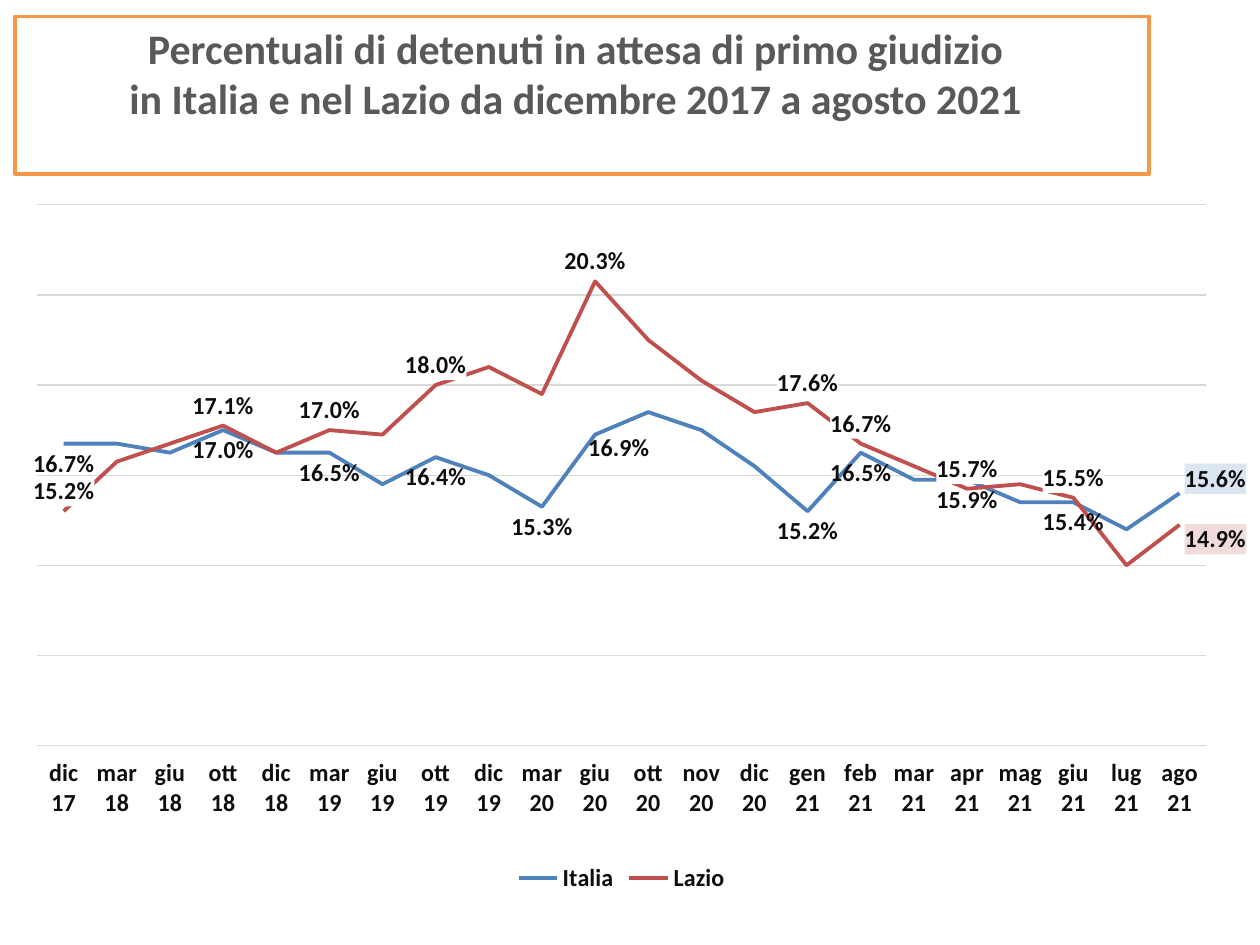
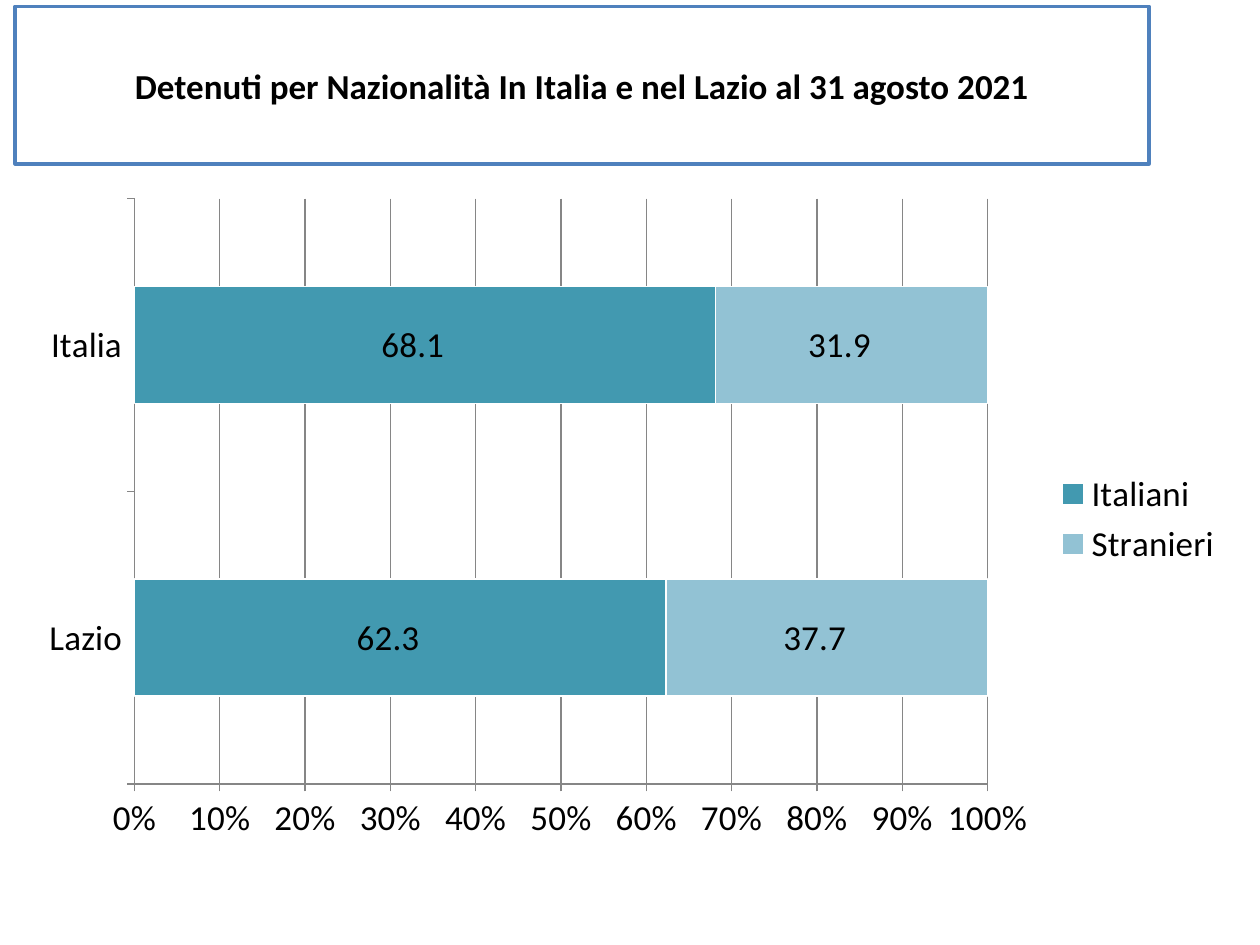
from dataclasses import dataclass, field

from pptx import Presentation
from pptx.chart.chart import Chart
from pptx.chart.data import CategoryChartData
from pptx.dml.color import RGBColor
from pptx.enum.chart import (XL_CHART_TYPE, XL_LABEL_POSITION,
                             XL_LEGEND_POSITION, XL_TICK_LABEL_POSITION,
                             XL_TICK_MARK)
from pptx.enum.shapes import MSO_SHAPE
from pptx.enum.text import MSO_ANCHOR, PP_ALIGN
from pptx.oxml import parse_xml
from pptx.oxml.ns import nsdecls
from pptx.slide import Slide
from pptx.util import Inches, Pt

LINE, STACK = XL_CHART_TYPE.LINE, XL_CHART_TYPE.BAR_STACKED_100
ABOVE, BELOW = XL_LABEL_POSITION.ABOVE, XL_LABEL_POSITION.BELOW
CENTRE = XL_LABEL_POSITION.CENTER
BOTTOM, RIGHT = XL_LEGEND_POSITION.BOTTOM, XL_LEGEND_POSITION.RIGHT
LOW = XL_TICK_LABEL_POSITION.LOW
NO_TICK, TICK = XL_TICK_MARK.NONE, XL_TICK_MARK.OUTSIDE
RECT = MSO_SHAPE.RECTANGLE
TOP, MIDDLE = MSO_ANCHOR.TOP, MSO_ANCHOR.MIDDLE
MID = PP_ALIGN.CENTER

FONT = "Calibri"
WHITE = RGBColor(0xFF, 0xFF, 0xFF)
BLACK = RGBColor(0x00, 0x00, 0x00)
INK = RGBColor(0x0D, 0x0D, 0x0D)
GREY = RGBColor(0x59, 0x59, 0x59)
PALE = RGBColor(0xD9, 0xD9, 0xD9)
AXIS = RGBColor(0x86, 0x86, 0x86)
ORANGE = RGBColor(0xF7, 0x96, 0x46)
BLUE = RGBColor(0x4F, 0x81, 0xBD)
RED = RGBColor(0xC0, 0x50, 0x4D)
ICE = RGBColor(0xDC, 0xE6, 0xF2)
ROSE = RGBColor(0xF2, 0xDC, 0xDB)
TEAL = RGBColor(0x42, 0x99, 0xB0)
AQUA = RGBColor(0x92, 0xC2, 0xD4)


@dataclass
class Title:
    text: str
    top: float
    size: int
    color: RGBColor
    edge: RGBColor
    anchor: MSO_ANCHOR = MIDDLE
    right: float = 0.1


@dataclass
class Trend:
    name: str
    vals: list[float]
    color: RGBColor
    place: XL_LABEL_POSITION
    shown: list[int]
    last: RGBColor
    back: RGBColor | None = None
    shifts: dict[int, tuple[float, float]] = field(default_factory=dict)


@dataclass
class Share:
    name: str
    vals: list[float]
    color: RGBColor


@dataclass
class Frame:
    left: float
    top: float
    width: float
    height: float
    size: int
    color: RGBColor
    bold: bool
    legend: XL_LEGEND_POSITION


MONTHS = ["ago 21", "lug 21", "giu 21", "mag 21", "apr 21", "mar 21",
          "feb 21", "gen 21", "dic 20", "nov 20", "ott 20", "giu 20",
          "mar 20", "dic 19", "ott 19", "giu 19", "mar 19", "dic 18",
          "ott 18", "giu 18", "mar 18", "dic 17"]
SHOWN = [0, 2, 4, 6, 7, 11, 14, 16, 18, 21]
TRENDS = [
    Trend("Italia",
          [0.156, 0.148, 0.154, 0.154, 0.159, 0.159, 0.165, 0.152, 0.162,
           0.17, 0.174, 0.169, 0.153, 0.16, 0.164, 0.158, 0.165, 0.165,
           0.17, 0.165, 0.167, 0.167],
          BLUE, BELOW, sorted(SHOWN + [12]), ICE,
          shifts={0: (0.03, -0.05), 11: (0.02, -0.01)}),
    Trend("Lazio",
          [0.149, 0.14, 0.155, 0.158, 0.157, 0.162, 0.167, 0.176, 0.174,
           0.181, 0.19, 0.203, 0.178, 0.184, 0.18, 0.169, 0.17, 0.165,
           0.171, 0.167, 0.163, 0.152],
          RED, ABOVE, SHOWN, ROSE, WHITE, {0: (0.03, 0.05)}),
]
PLACES = ["Lazio", "Italia"]
SHARES = [Share("Italiani", [62.3, 68.1], TEAL),
          Share("Stranieri", [37.7, 31.9], AQUA)]


def add_title(slide: Slide, title: Title) -> None:
    box = slide.shapes.add_shape(RECT, Inches(0.12), Inches(title.top),
                                 Inches(9), Inches(1.25))
    box.shadow.inherit = False
    box.fill.solid()
    box.fill.fore_color.rgb = WHITE
    box.line.color.rgb = title.edge
    box.line.width = Pt(2)
    frame = box.text_frame
    frame.word_wrap = True
    frame.vertical_anchor = title.anchor
    frame.margin_right = Inches(title.right)
    frame.text = title.text
    for para in frame.paragraphs:
        para.alignment = MID
        for run in para.runs:
            font = run.font
            font.name, font.size, font.bold = FONT, Pt(title.size), True
            font.color.rgb = title.color


def set_font(font, frame: Frame) -> None:
    font.name, font.size, font.bold = FONT, Pt(frame.size), frame.bold
    font.color.rgb = frame.color


def set_line(line, color: RGBColor, width: float = 0.75) -> None:
    line.color.rgb = color
    line.width = Pt(width)


def add_chart(slide: Slide, kind: XL_CHART_TYPE, frame: Frame,
              cats: list[str], rows: list, form: str) -> Chart:
    data = CategoryChartData(number_format=form)
    data.categories = cats
    for row in rows:
        data.add_series(row.name, row.vals)
    spot = [Inches(n) for n in
            (frame.left, frame.top, frame.width, frame.height)]
    chart = slide.shapes.add_chart(kind, *spot, data).chart
    chart.has_title = False
    set_font(chart.font, frame)
    chart.has_legend = True
    chart.legend.position = frame.legend
    chart.legend.include_in_layout = False
    set_font(chart.legend.font, frame)
    chart.plots[0].vary_by_categories = False
    return chart


def make_layout(**parts: float | str):
    body = "".join(f'<c:{key} val="{val}"/>' for key, val in parts.items())
    return parse_xml(f'<c:layout {nsdecls("c")}><c:manualLayout>{body}'
                     "</c:manualLayout></c:layout>")


def make_fill(color: RGBColor):
    return parse_xml(f'<c:spPr {nsdecls("c", "a")}><a:solidFill>'
                     f'<a:srgbClr val="{color}"/></a:solidFill></c:spPr>')


def add_labels(chart: Chart, order: int, trend: Trend, frame: Frame) -> None:
    series = chart.plots[0].series[order]
    for i in trend.shown:
        label = series.points[i].data_label
        set_font(label.font, frame)
        label.position = trend.place
        node = chart.element.xpath(
            f'.//c:ser[c:idx/@val="{order}"]'
            f'/c:dLbls/c:dLbl[c:idx/@val="{i}"]')[0]
        if i in trend.shifts:
            x, y = trend.shifts[i]
            node.xpath("./c:idx")[0].addnext(make_layout(x=x, y=y))
        color = trend.back if i else trend.last
        if color is not None:
            for old in node.xpath("./c:spPr"):
                node.remove(old)
            node.xpath("./c:txPr")[0].addprevious(make_fill(color))
    series.data_labels.show_value = False


def draw_trends(slide: Slide) -> None:
    frame = Frame(0.2, 1.62, 9.69, 5.51, 14, INK, True, BOTTOM)
    chart = add_chart(slide, LINE, frame, MONTHS, TRENDS, "0.0%")
    months, scale = chart.category_axis, chart.value_axis
    months.reverse_order = True
    months.major_tick_mark = NO_TICK
    months.tick_label_position = LOW
    set_font(months.tick_labels.font, frame)
    set_line(months.format.line, PALE)
    scale.minimum_scale, scale.maximum_scale = 0.1, 0.22
    scale.major_unit = 0.02
    scale.has_major_gridlines = True
    set_line(scale.major_gridlines.format.line, PALE)
    scale.visible = False
    for order, trend in enumerate(TRENDS):
        series = chart.plots[0].series[order]
        series.smooth = False
        set_line(series.format.line, trend.color, 2.25)
        add_labels(chart, order, trend, frame)
    area = chart.element.xpath(".//c:plotArea")[0]
    for old in area.xpath("./c:layout"):
        area.remove(old)
    area.insert(0, make_layout(layoutTarget="inner", xMode="edge",
                               yMode="edge", x=0.01, y=0, w=0.98, h=0.78))


def draw_shares(slide: Slide) -> None:
    frame = Frame(0.2, 1.47, 9.61, 5.3, 20, BLACK, False, RIGHT)
    form = r"_-* #,##0.0\ _€_-"
    chart = add_chart(slide, STACK, frame, PLACES, SHARES, form)
    plot = chart.plots[0]
    plot.gap_width, plot.overlap = 150, 100
    for axis in (chart.category_axis, chart.value_axis):
        axis.major_tick_mark = TICK
        set_font(axis.tick_labels.font, frame)
        set_line(axis.format.line, AXIS)
    scale = chart.value_axis
    scale.has_major_gridlines = True
    set_line(scale.major_gridlines.format.line, AXIS)
    scale.tick_labels.number_format = "0%"
    scale.tick_labels.number_format_is_linked = False
    for series, share in zip(plot.series, SHARES):
        series.format.fill.solid()
        series.format.fill.fore_color.rgb = share.color
        set_line(series.format.line, WHITE)
        labels = series.data_labels
        labels.show_value = True
        labels.position = CENTRE
        labels.number_format = form
        labels.number_format_is_linked = False
        set_font(labels.font, frame)


def main() -> None:
    deck = Presentation()
    deck.slide_width, deck.slide_height = Inches(10), Inches(7.5)
    blank = deck.slide_layouts[6]
    pages = [
        (Title("Percentuali di detenuti in attesa di primo giudizio\v"
               "in Italia e nel Lazio da dicembre 2017 a agosto 2021",
               0.13, 24, GREY, ORANGE, TOP, 0.2), draw_trends),
        (Title("Detenuti per Nazionalità In Italia e nel Lazio "
               "al 31 agosto 2021", 0.05, 20, BLACK, BLUE), draw_shares),
    ]
    for title, draw in pages:
        slide = deck.slides.add_slide(blank)
        add_title(slide, title)
        draw(slide)
    deck.save("out.pptx")


if __name__ == "__main__":
    main()
